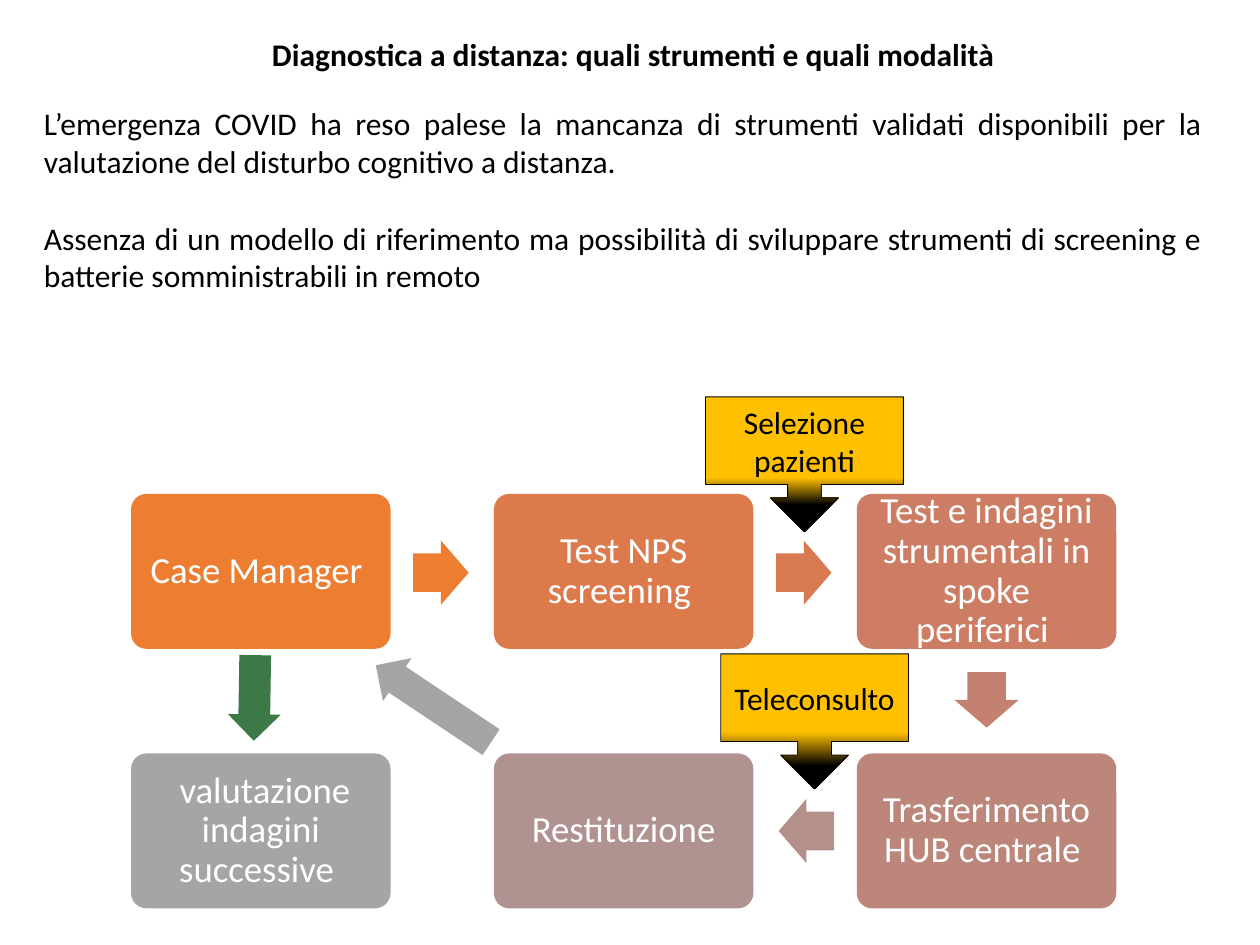
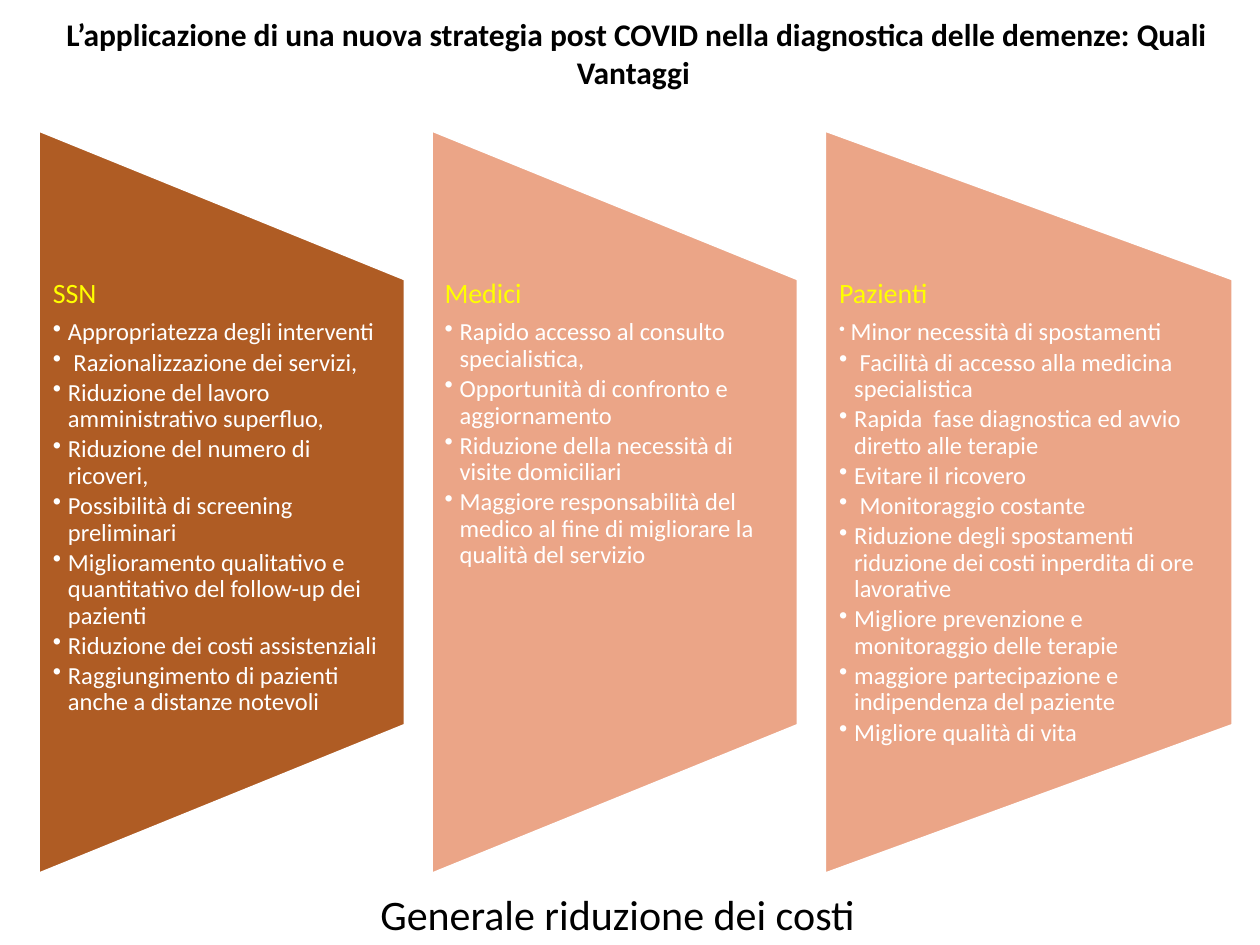
import pptx
import pptx.dml.color
import pptx.enum.shapes
import pptx.enum.text
import pptx.oxml.ns
import pptx.util
from lxml import etree

Inches = pptx.util.Inches
Pt = pptx.util.Pt
SHAPE = pptx.enum.shapes.MSO_SHAPE
ALIGN = pptx.enum.text.PP_ALIGN
ANCHOR = pptx.enum.text.MSO_ANCHOR
rgb = pptx.dml.color.RGBColor.from_string

FONT = "Calibri"
BLACK, WHITE, YELLOW, AMBER = "000000", "FFFFFF", "FFFF00", "FFC000"


def write(frame, text, size=18, color=BLACK, bold=False, align=ALIGN.LEFT,
          spacing=None, after=0, bullet_indent=None, lead_size=None):
    """Add one paragraph; lead_size puts a space of that size before the text."""
    frame.word_wrap = True
    paragraph = frame.paragraphs[0]
    if paragraph.runs:
        paragraph = frame.add_paragraph()
    paragraph.alignment = align
    paragraph.line_spacing = spacing
    paragraph.space_after = Pt(after)
    if bullet_indent:
        properties = paragraph._p.get_or_add_pPr()
        properties.set("marL", str(Inches(bullet_indent)))
        properties.set("indent", str(-Inches(bullet_indent)))
        bullet = etree.SubElement(properties, pptx.oxml.ns.qn("a:buChar"))
        bullet.set("char", "•")
    pieces = [(" ", lead_size)] if lead_size else []
    for piece, piece_size in pieces + [(text, size)]:
        run = paragraph.add_run()
        run.text = piece
        run.font.name = FONT
        run.font.size = Pt(piece_size)
        run.font.bold = bold
        run.font.color.rgb = rgb(color)


def draw(slide, kind, left, top, width, height, fill, rotation=0, adjustments=()):
    """Add a flat preset shape without an outline."""
    shape = slide.shapes.add_shape(
        kind, Inches(left), Inches(top), Inches(width), Inches(height))
    shape.shadow.inherit = False
    shape.fill.solid()
    shape.fill.fore_color.rgb = rgb(fill)
    shape.line.fill.background()
    shape.rotation = rotation
    for index, value in enumerate(adjustments):
        shape.adjustments[index] = value
    return shape


deck = pptx.Presentation()
deck.slide_width, deck.slide_height = Inches(10), Inches(7.5)

# Both slides carry the same centred bold title
slides = []
for title, top, height in [
    ("Diagnostica a distanza: quali strumenti e quali modalità ", 0.23, 0.5),
    ("L’applicazione di una nuova strategia post COVID nella diagnostica "
     "delle demenze: Quali Vantaggi ", 0.07, 0.91),
]:
    slide = deck.slides.add_slide(deck.slide_layouts[6])
    heading = slide.shapes.add_textbox(
        Inches(0.4), Inches(top), Inches(9.31), Inches(height))
    write(heading.text_frame, title, bold=True, align=ALIGN.CENTER)
    slides.append(slide)
process, benefits = slides

# Slide 1: introduction
introduction = process.shapes.add_textbox(
    Inches(0.25), Inches(0.78), Inches(9.39), Inches(2.12))
for sentence, after in [
    ("L’emergenza COVID ha reso palese la mancanza di strumenti validati "
     "disponibili per la valutazione del disturbo cognitivo a distanza.", 22),
    ("Assenza di un modello di riferimento ma possibilità di sviluppare "
     "strumenti di screening e batterie somministrabili in remoto ", 0),
]:
    write(introduction.text_frame, sentence, align=ALIGN.JUSTIFY, after=after)

# Slide 1: care pathway, steps placed by column and row
for step, column, row, color in [
    ("Case Manager ", 0, 0, "ED7D31"),
    ("Test NPS screening ", 1, 0, "DC7A4B"),
    ("Test e indagini strumentali in spoke periferici ", 2, 0, "CC7D64"),
    ("Trasferimento HUB centrale ", 2, 1, "BD867B"),
    ("Restituzione", 1, 1, "B09391"),
    (" valutazione indagini successive ", 0, 1, "A5A5A5"),
]:
    box = draw(process, SHAPE.ROUNDED_RECTANGLE, 1.04 + 2.88 * column,
               3.92 + 2.06 * row, 2.06, 1.23, color, adjustments=[0.1])
    frame = box.text_frame
    frame.vertical_anchor = ANCHOR.MIDDLE
    frame.margin_left = frame.margin_right = Inches(0.09)
    frame.margin_top = frame.margin_bottom = Inches(0.09)
    write(frame, step, size=21, color=WHITE, align=ALIGN.CENTER, spacing=0.9)

for left, top, width, height, rotation, color in [
    (3.28, 4.29, 0.44, 0.51, 0, "ED7D31"),
    (6.16, 4.29, 0.44, 0.51, 0, "D87A51"),
    (7.61, 5.3, 0.44, 0.51, 90, "C48170"),
    (6.18, 6.34, 0.44, 0.51, 180, "B4908B"),
    (2.89, 5.38, 1.1, 0.41, 213.7, "A5A5A5"),
    (1.68, 5.33, 0.68, 0.42, 90.9, "3D7847"),
]:
    draw(process, SHAPE.RIGHT_ARROW, left, top, width, height, color,
         rotation, adjustments=[0.6, 0.5])

for label, left, top, width, amber_end, black_start in [
    ("Selezione pazienti", 5.6, 3.15, 1.57, 0.6, 0.8),
    ("Teleconsulto", 5.72, 5.19, 1.49, 0.58, 0.83),
]:
    callout = draw(process, SHAPE.DOWN_ARROW_CALLOUT, left, top, width, 1.07, AMBER)
    callout.fill.gradient()
    callout.fill.gradient_angle = 270
    stops = callout.fill.gradient_stops
    for stop, color, position in zip(stops, (AMBER, BLACK), (amber_end, black_start)):
        stop.color.rgb = rgb(color)
        stop.position = position
    callout.line.color.rgb = rgb(BLACK)
    callout.line.width = Pt(0.5)
    callout.text_frame.vertical_anchor = ANCHOR.MIDDLE
    write(callout.text_frame, label, align=ALIGN.CENTER)

# Slide 2: one tapering panel per beneficiary
panel_top, panel_height = 1.04, 5.89
beneficiaries = [
    ("SSN", 2.9, "AF5C24", 0.11, [
        "Appropriatezza degli interventi",
        " Razionalizzazione dei servizi,",
        "Riduzione del lavoro amministrativo superfluo,",
        "Riduzione del numero di ricoveri,",
        "Possibilità di screening preliminari",
        "Miglioramento qualitativo e quantitativo del follow-up dei pazienti",
        "Riduzione dei costi assistenziali",
        "Raggiungimento di pazienti anche a distanze notevoli",
    ]),
    ("Medici", 2.9, "EBA587", 0.1, [
        "Rapido accesso al consulto specialistica,",
        "Opportunità di confronto e  aggiornamento",
        "Riduzione della necessità di visite domiciliari",
        "Maggiore responsabilità del medico al fine di migliorare la qualità "
        "del servizio",
    ]),
    ("Pazienti", 3.23, "EBA587", 0.11, [
        "Minor necessità di spostamenti",
        " Facilità di accesso alla medicina specialistica",
        "Rapida  fase diagnostica ed avvio diretto alle terapie",
        "Evitare il ricovero",
        " Monitoraggio costante",
        "Riduzione degli spostamenti riduzione dei costi inperdita di ore lavorative",
        "Migliore prevenzione e monitoraggio delle terapie",
        "maggiore partecipazione e indipendenza del paziente",
        "Migliore qualità di vita",
    ]),
]
for column, (beneficiary, width, color, margin, advantages) in enumerate(beneficiaries):
    left = 0.31 + 3.12 * column
    # The panel is turned on its side, so width and height swap about its centre
    swap = (panel_height - width) / 2
    panel = draw(benefits, SHAPE.FLOWCHART_MANUAL_OPERATION, left - swap,
                 panel_top + swap, panel_height, width, color, rotation=270)
    panel.line.color.rgb = rgb(WHITE)
    panel.line.width = Pt(1)

    frame = benefits.shapes.add_textbox(
        Inches(left), Inches(2.22), Inches(width), Inches(3.53)).text_frame
    frame.margin_left = frame.margin_right = Inches(margin)
    frame.margin_top = frame.margin_bottom = 0
    write(frame, beneficiary, size=16, color=YELLOW, spacing=0.9, after=5.6)
    for advantage in advantages:
        tight = advantage.startswith("Minor ")
        write(frame, advantage, size=14, color=WHITE, spacing=0.9, after=2.1,
              bullet_indent=0.06 if tight else 0.12,
              lead_size=10 if tight else None)

conclusion = benefits.shapes.add_textbox(
    Inches(2.92), Inches(7), Inches(4.68), Inches(0.5))
write(conclusion.text_frame, "Generale riduzione dei costi", size=24)

deck.save("out.pptx")
